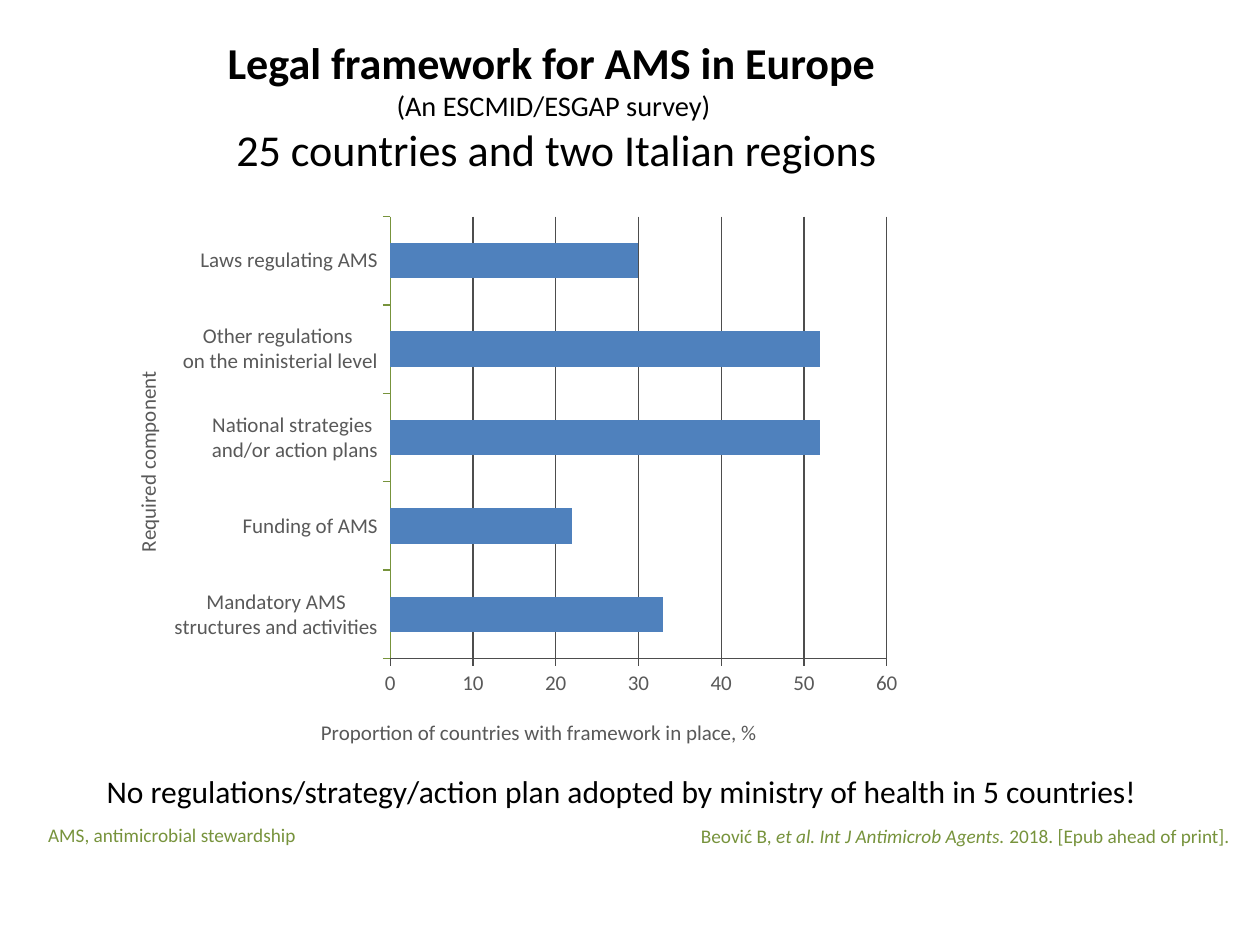
from dataclasses import dataclass

from pptx import Presentation
from pptx.chart.data import CategoryChartData
from pptx.dml.color import RGBColor
from pptx.enum.chart import XL_CHART_TYPE, XL_TICK_MARK
from pptx.enum.text import MSO_ANCHOR, MSO_AUTO_SIZE, PP_ALIGN
from pptx.oxml import parse_xml
from pptx.oxml.ns import nsdecls, qn
from pptx.util import Cm, Pt

BAR = XL_CHART_TYPE.BAR_CLUSTERED
OUT = XL_TICK_MARK.OUTSIDE
TOP, MIDDLE, BOTTOM = MSO_ANCHOR.TOP, MSO_ANCHOR.MIDDLE, MSO_ANCHOR.BOTTOM
LEFT, CENTER, RIGHT = PP_ALIGN.LEFT, PP_ALIGN.CENTER, PP_ALIGN.RIGHT
FIXED = MSO_AUTO_SIZE.NONE


@dataclass(frozen=True)
class Theme:
    font: str = "Calibri"
    ink: str = "000000"
    label: str = "595959"
    grid: str = "4D4D4D"
    green: str = "77933C"
    bar: str = "4F81BD"
    head: float = 25.2
    sub: float = 16.2
    body: float = 18
    axis: float = 12
    note: float = 11


def pin(x, y, w=None, h=None):
    """Return a chart layout placed by fractions of the chart area."""
    inner = '<c:layoutTarget val="inner"/>' if w else ""
    size = f'<c:w val="{w}"/><c:h val="{h}"/>' if w else ""
    return parse_xml(
        f'<c:layout {nsdecls("c")}><c:manualLayout>{inner}'
        '<c:xMode val="edge"/><c:yMode val="edge"/>'
        f'<c:x val="{x}"/><c:y val="{y}"/>{size}</c:manualLayout></c:layout>')


def clear(node):
    for old in node.findall(qn("c:layout")):
        node.remove(old)


class Page:
    def __init__(self, slide, theme):
        self.slide, self.theme = slide, theme

    def style(self, font, size, color, bold=False, italic=False):
        font.name, font.size = self.theme.font, Pt(size)
        font.color.rgb = RGBColor.from_string(color)
        font.bold, font.italic = bold, italic

    def line(self, form, color):
        form.line.color.rgb = RGBColor.from_string(color)
        form.line.width = Pt(0.75)

    def run(self, para, text, size, color, **look):
        run = para.add_run()
        run.text = text
        self.style(run.font, size, color, **look)

    def title(self, box, lines):
        shape = self.slide.shapes.title
        shape.left, shape.top, shape.width, shape.height = map(Cm, box)
        frame = shape.text_frame
        frame.auto_size, frame.vertical_anchor = FIXED, MIDDLE
        para = frame.paragraphs[0]
        para.alignment = CENTER
        for i, (text, size, bold) in enumerate(lines):
            if i:
                para.add_line_break()
            self.run(para, text, size, self.theme.ink, bold=bold)

    def text(self, box, runs, size, color, align=LEFT, anchor=TOP, inset=None):
        frame = self.slide.shapes.add_textbox(*map(Cm, box)).text_frame
        frame.word_wrap, frame.vertical_anchor = True, anchor
        if inset is not None:
            frame.margin_left = frame.margin_right = Cm(inset)
            frame.margin_top = frame.margin_bottom = Cm(inset)
        para = frame.paragraphs[0]
        para.alignment = align
        for text, italic in runs:
            self.run(para, text, size, color, italic=italic)
        return para

    def axis(self, axis, name, color, spot):
        look = self.theme
        axis.major_tick_mark = OUT
        self.style(axis.tick_labels.font, look.axis, look.label)
        self.line(axis.format, color)
        title = axis.axis_title
        para = title.text_frame.paragraphs[0]
        self.run(para, name, look.axis, look.label)
        node = title._element
        clear(node)
        node.find(qn("c:tx")).addnext(pin(*spot))

    def chart(self, box, rows):
        look = self.theme
        data = CategoryChartData()
        data.categories = [name for name, _ in rows]
        data.add_series("Series 1", [value for _, value in rows])
        chart = self.slide.shapes.add_chart(BAR, *map(Cm, box), data).chart
        chart.has_legend = chart.has_title = False
        self.style(chart.font, 10, look.ink)
        plot = chart.plots[0]
        plot.gap_width, plot.vary_by_categories = 150, False
        fill = plot.series[0].format.fill
        fill.solid()
        fill.fore_color.rgb = RGBColor.from_string(look.bar)

        self.axis(chart.category_axis, "Required component",
                  look.green, (0.04, 0.29))
        value = chart.value_axis
        self.axis(value, "Proportion of countries with framework in place, %",
                  look.grid, (0.27, 0.91))
        value.minimum_scale, value.maximum_scale = 0, 60
        value.major_unit = 10
        self.line(value.major_gridlines.format, look.grid)

        area = chart._chartSpace.chart.plotArea
        clear(area)
        area.insert(0, pin(0.36, 0.02, 0.61, 0.79))


def main():
    deck = Presentation()
    deck.slide_width, deck.slide_height = Cm(25.4), Cm(19.05)
    look = Theme()
    page = Page(deck.slides.add_slide(deck.slide_layouts[5]), look)

    page.title((0.91, 0.91, 20.62, 2.41), [
        ("Legal framework for AMS in Europe ", look.head, True),
        ("(An ESCMID/ESGAP survey) ", look.sub, False),
        ("25 countries and two Italian regions", look.head, False),
    ])
    page.text((9.8, 16.61, 14.99, 0.48), [
        ("Beović B, ", False),
        ("et al. Int J Antimicrob Agents.", True),
        (" 2018. [Epub ahead of print].", False),
    ], look.note, look.green, RIGHT, BOTTOM, 0)
    page.chart((1.96, 4.14, 16.41, 11.28), [
        ("Mandatory AMS\nstructures and activities", 33),
        ("Funding of AMS", 22),
        ("National strategies \nand/or action plans", 52),
        ("Other regulations \non the ministerial level", 52),
        ("Laws regulating AMS", 30),
    ])
    note = page.text((0.97, 16.64, 7.8, 0.43),
                     [("AMS, antimicrobial stewardship", False)],
                     look.note, look.green, anchor=BOTTOM, inset=0)
    note.line_spacing = 0.9
    page.text((1.9, 15.44, 22.61, 1.02), [
        ("No regulations/strategy/action plan adopted by "
         "ministry of health in 5 countries!", False),
    ], look.body, look.ink)
    deck.save("out.pptx")


if __name__ == "__main__":
    main()
